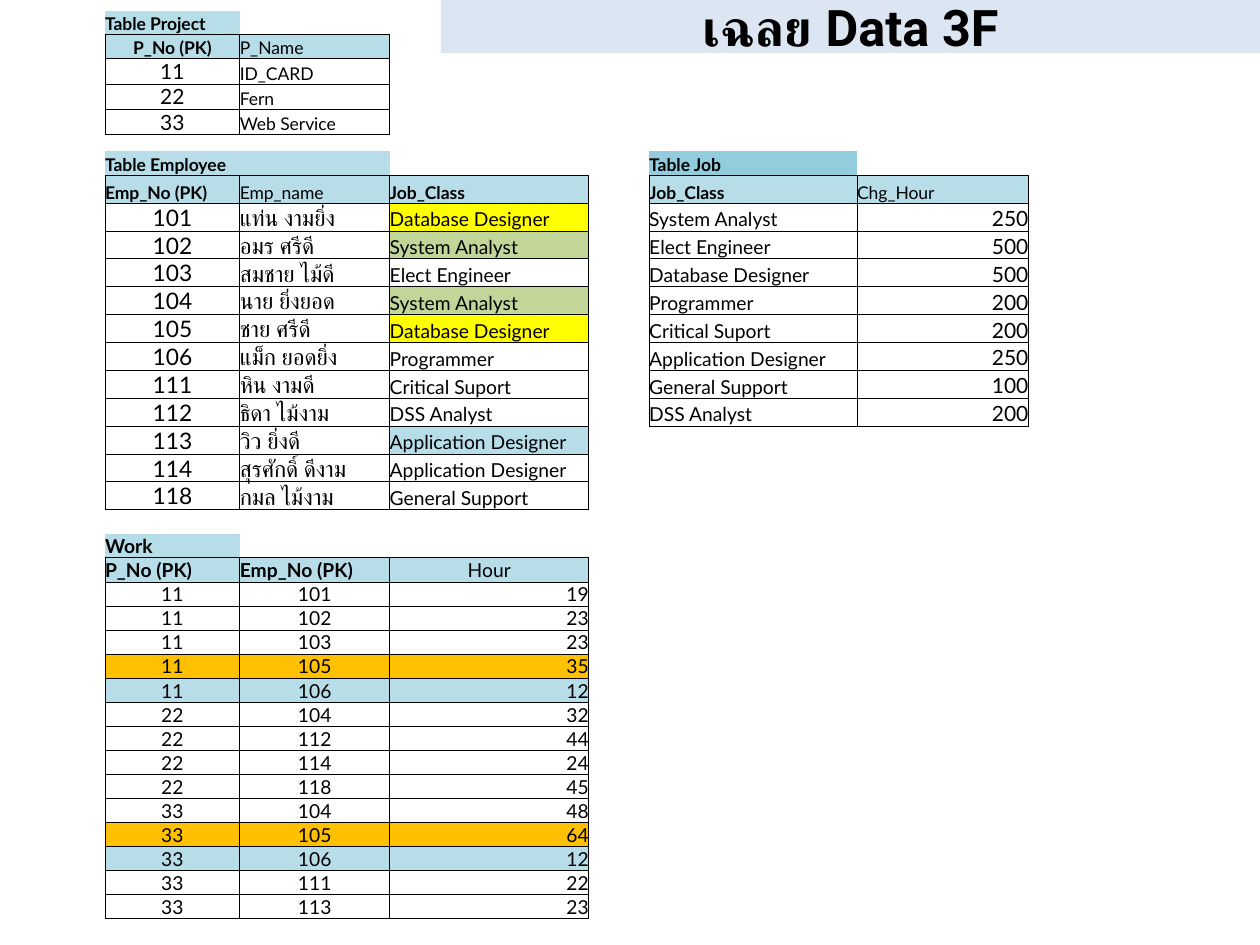
from lxml import etree
from pptx import Presentation
from pptx import util as u
from pptx.dml.color import RGBColor
from pptx.enum import shapes, text
from pptx.oxml.ns import qn

W, H = u.Inches(10), u.Inches(7.5)
C = {"text": "000000", "head": "B6DDE8", "job": "93CDDD", "yellow": "FFFF00",
     "green": "C2D69A", "orange": "FFC000", "band": "DCE6F2"}
ALIGN = {"l": text.PP_ALIGN.LEFT, "c": text.PP_ALIGN.CENTER, "r": text.PP_ALIGN.RIGHT}
SIDES = {"a:lnL": (0, -1), "a:lnR": (0, 1), "a:lnT": (-1, 0), "a:lnB": (1, 0)}
NO_STYLE = "{2D5ABB26-0587-4C30-8999-92F81FD0307C}"
COLS = [1.07, 1.19, 1.58, 0.48, 1.65, 1.36]
ROWS = [0.19] * 2 + [0.2] * 3 + [0.13, 0.19] + [0.22] * 12 + [0.19] * 17

PROJECTS = [("11", "ID_CARD"), ("22", "Fern"), ("33", "Web Service")]
EMPLOYEES = [
    ("101", "แท่น งามยิ่ง", "Database Designer"),
    ("102", "อมร ศรีดี", "System Analyst"),
    ("103", "สมชาย ไม้ดี", "Elect Engineer"),
    ("104", "นาย ยิ่งยอด", "System Analyst"),
    ("105", "ชาย ศรีดี", "Database Designer"),
    ("106", "แม็ก ยอดยิ่ง", "Programmer"),
    ("111", "หิน งามดี", "Critical Suport"),
    ("112", "ธิดา ไม้งาม", "DSS Analyst"),
    ("113", "วิว ยิ่งดี", "Application Designer"),
    ("114", "สุรศักดิ์ ดีงาม", "Application Designer"),
    ("118", "กมล ไม้งาม", "General Support"),
]
JOBS = [("System Analyst", "250"), ("Elect Engineer", "500"), ("Database Designer", "500"),
        ("Programmer", "200"), ("Critical Suport", "200"), ("Application Designer", "250"),
        ("General Support", "100"), ("DSS Analyst", "200")]
WORK = [("11", "101", "19"), ("11", "102", "23"), ("11", "103", "23"), ("11", "105", "35"),
        ("11", "106", "12"), ("22", "104", "32"), ("22", "112", "44"), ("22", "114", "24"),
        ("22", "118", "45"), ("33", "104", "48"), ("33", "105", "64"), ("33", "106", "12"),
        ("33", "111", "22"), ("33", "113", "23")]
EMPLOYEE_FILLS = {(0, 2): "yellow", (1, 2): "green", (3, 2): "green",
                  (4, 2): "yellow", (8, 2): "head"}
WORK_FILLS = {(row, col): fill for row, fill in
              ((3, "orange"), (4, "head"), (10, "orange"), (11, "head")) for col in range(3)}


def style_text(p, size, bold, font, align):
    """Format a paragraph and its runs."""
    p.alignment = align
    for r in p.runs:
        r.font.size, r.font.bold, r.font.name = u.Pt(size), bold, font
        r.font.color.rgb = RGBColor.from_string(C["text"])


def write_cell(cell, words, size, bold=False, align="l", fill=None):
    """Write one cell and fill it if a colour is named."""
    p = cell.text_frame.paragraphs[0]
    p.text = words
    style_text(p, size, bold, "Lato", ALIGN[align])
    if fill:
        cell.fill.solid()
        cell.fill.fore_color.rgb = RGBColor.from_string(C[fill])


def add_relation(tb, box, caption, heads, records, sizes, aligns, head_size=10,
                 caption_fill="head", fills=None):
    """Write a captioned relation from a grid position and return its ruled cells."""
    top, left = box
    write_cell(tb.cell(top, left), caption, head_size, True, fill=caption_fill)
    for col, (words, bold, align) in enumerate(heads):
        write_cell(tb.cell(top + 1, left + col), words, head_size, bold, align, "head")
    for row, record in enumerate(records):
        for col, words in enumerate(record):
            write_cell(tb.cell(top + 2 + row, left + col), words, sizes[col],
                       align=aligns[col], fill=(fills or {}).get((row, col)))
    return {(top + 1 + row, left + col)
            for row in range(len(records) + 1) for col in range(len(heads))}


def rule_cell(cell, row, col, ruled):
    """Draw the sides of a cell that touch a ruled cell and clear the others."""
    tcPr = cell._tc.get_or_add_tcPr()
    for i, (tag, (dr, dc)) in enumerate(SIDES.items()):
        ln = etree.Element(qn(tag), w=str(u.Pt(0.5)))
        if ruled & {(row, col), (row + dr, col + dc)}:
            fill = etree.SubElement(ln, qn("a:solidFill"))
            etree.SubElement(fill, qn("a:srgbClr"), val=C["text"])
        else:
            etree.SubElement(ln, qn("a:noFill"))
        tcPr.insert(i, ln)


def add_grid(s, x, y, w, h):
    """Add the shared table and its four relations."""
    tb = s.shapes.add_table(len(ROWS), len(COLS), x, y, w, h).table
    tb.first_row = tb.horz_banding = False
    tb._tbl.tblPr.find(qn("a:tableStyleId")).text = NO_STYLE
    for items, lengths, total, name in ((tb.columns, COLS, w, "width"),
                                        (tb.rows, ROWS, h, "height")):
        for item, length in zip(items, lengths):
            setattr(item, name, int(total * length / sum(lengths)))
    ruled = add_relation(tb, (0, 0), "Table Project",
                         [("P_No (PK)", True, "c"), ("P_Name", False, "l")],
                         PROJECTS, (12, 10), "cl")
    ruled |= add_relation(tb, (6, 0), "Table Employee",
                          [("Emp_No (PK)", True, "l"), ("Emp_name", False, "l"),
                           ("Job_Class", True, "l")],
                          EMPLOYEES, (13, 13, 11), "cll", fills=EMPLOYEE_FILLS)
    ruled |= add_relation(tb, (6, 4), "Table Job",
                          [("Job_Class", True, "l"), ("Chg_Hour", False, "l")],
                          JOBS, (11, 12), "lr", caption_fill="job")
    ruled |= add_relation(tb, (20, 0), "Work",
                          [("P_No (PK)", True, "l"), ("Emp_No (PK)", True, "l"),
                           ("Hour", False, "c")],
                          WORK, (11, 11, 11), "ccr", 11, fills=WORK_FILLS)
    tb.cell(6, 0).merge(tb.cell(6, 1))
    for row in range(len(ROWS)):
        for col in range(len(COLS)):
            cell = tb.cell(row, col)
            cell.margin_left = cell.margin_right = cell.margin_top = cell.margin_bottom = 0
            cell.vertical_anchor = text.MSO_ANCHOR.BOTTOM
            if not cell.text_frame.text:
                p = cell.text_frame.paragraphs[0]
                etree.SubElement(p._p, qn("a:endParaRPr"), sz="600")
            rule_cell(cell, row, col, ruled)


def add_title(s, x, y, w, h):
    """Add the title band."""
    sp = s.shapes.add_shape(shapes.MSO_SHAPE.RECTANGLE, x, y, w, h)
    sp.shadow.inherit = False
    sp.fill.solid()
    sp.fill.fore_color.rgb = RGBColor.from_string(C["band"])
    sp.line.fill.background()
    tf = sp.text_frame
    tf.text = "เฉลย Data 3F"
    tf.word_wrap = True
    tf.vertical_anchor = text.MSO_ANCHOR.MIDDLE
    style_text(tf.paragraphs[0], 28.8, True, "Roboto", ALIGN["c"])


def main():
    """Build and save the slide."""
    prs = Presentation()
    prs.slide_width, prs.slide_height = W, H
    s = prs.slides.add_slide(prs.slide_layouts[6])
    add_grid(s, W // 12, H // 90, int(W * 0.733), int(H * 0.962))
    add_title(s, int(W * 0.35), 0, int(W * 0.65), int(H * 0.056))
    prs.save("out.pptx")


if __name__ == "__main__":
    main()
